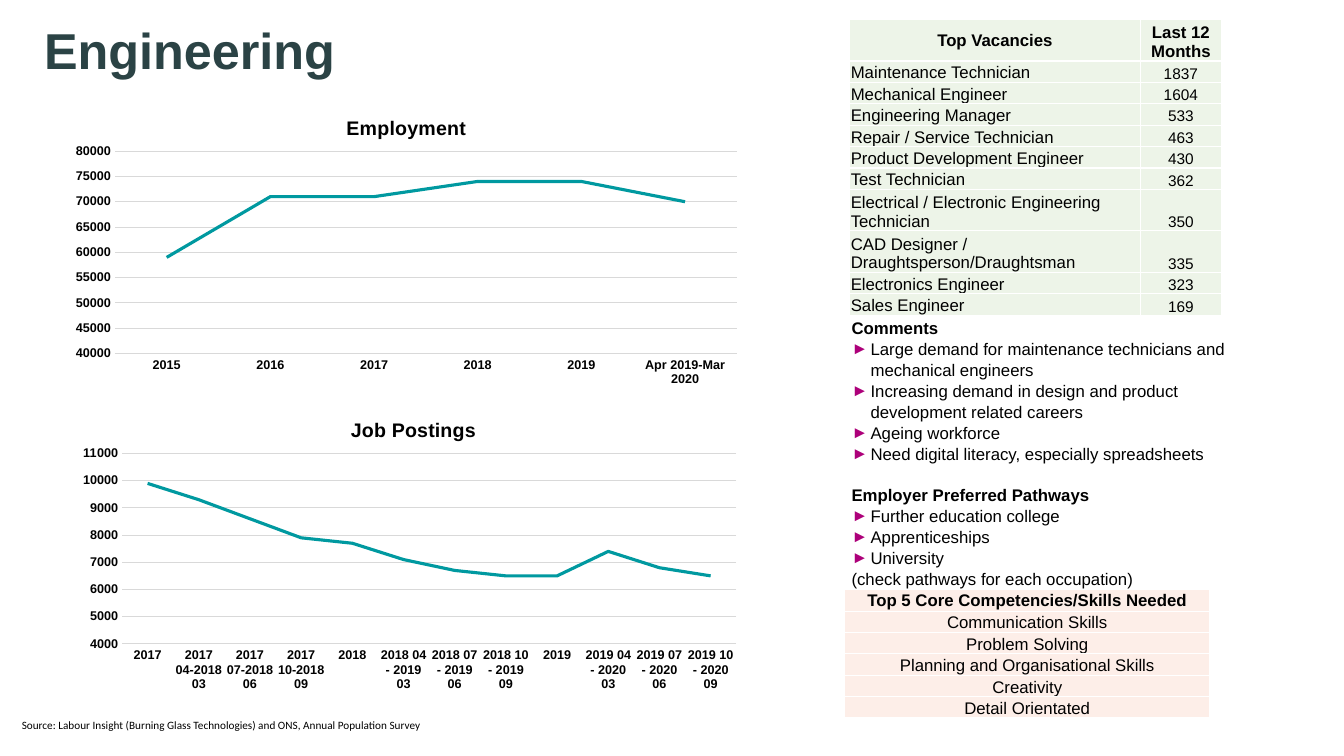
from lxml.etree import SubElement
from pptx import Presentation
from pptx.chart.data import CategoryChartData
from pptx.dml.color import RGBColor
from pptx.enum.chart import XL_CHART_TYPE as ChartType, XL_TICK_MARK as Tick
from pptx.enum.text import MSO_ANCHOR as Anchor, MSO_AUTO_SIZE as AutoSize, PP_ALIGN as Align
from pptx.oxml.ns import qn
from pptx.oxml.xmlchemy import OxmlElement
from pptx.util import Cm, Pt

SLATE = RGBColor(0x2B, 0x43, 0x45)
TEAL = RGBColor(0x00, 0x99, 0xA0)
MAGENTA = RGBColor(0xAD, 0x00, 0x7A)
GREEN_TINT = RGBColor(0xED, 0xF4, 0xE8)
PEACH_TINT = RGBColor(0xFD, 0xEE, 0xE8)
GREY = RGBColor(0xD9, 0xD9, 0xD9)
BLACK = RGBColor(0x00, 0x00, 0x00)
WHITE = RGBColor(0xFF, 0xFF, 0xFF)


class SectorSlide:
    """Holds the slide and the style shared by its elements."""
    font = "Arial"
    body_size = 12

    def __init__(self, slide):
        self.slide = slide

    def style(self, font, size, bold=False, color=BLACK, name=None):
        font.name = name or self.font
        font.size = Pt(size)
        font.bold = bold
        font.color.rgb = color

    def text(self, box, lines, size=None, bold=False, color=BLACK, name=None):
        """Adds a text box with one paragraph per line."""
        frame = self.slide.shapes.add_textbox(*map(Cm, box)).text_frame
        frame.word_wrap = True
        frame.text = "\n".join(lines)
        for paragraph in frame.paragraphs:
            for run in paragraph.runs:
                self.style(run.font, size or self.body_size, bold, color, name)
        return frame

    def bullet(self, paragraph):
        props = paragraph._p.get_or_add_pPr()
        props.set("marL", str(Cm(0.48)))
        props.set("indent", str(Cm(-0.48)))
        color = SubElement(props, qn("a:buClr"))
        SubElement(color, qn("a:srgbClr"), val=str(MAGENTA))
        SubElement(props, qn("a:buFont"), typeface=self.font)
        SubElement(props, qn("a:buChar"), char="►")

    def headed_lists(self, box, sections):
        """Adds headed lists; a line is (text, kind)."""
        lines = [line for section in sections for line in section]
        frame = self.text(box, [words for words, _ in lines])
        frame.auto_size = AutoSize.SHAPE_TO_FIT_TEXT
        for index, (paragraph, (_, kind)) in enumerate(zip(frame.paragraphs, lines)):
            if kind == "bullet":
                self.bullet(paragraph)
            elif kind == "heading":
                paragraph.runs[0].font.bold = True
                if index:
                    paragraph.space_before = Pt(14.4)
            paragraph.line_spacing = 1.04

    def cell(self, cell, words, fill, size, bold, align, anchor):
        cell.text = words
        cell.margin_left = cell.margin_right = cell.margin_top = Cm(0.03)
        cell.margin_bottom = 0
        cell.vertical_anchor = anchor
        cell.fill.solid()
        cell.fill.fore_color.rgb = fill
        paragraph = cell.text_frame.paragraphs[0]
        paragraph.alignment = align
        self.style(paragraph.runs[0].font, size, bold)
        props = cell._tc.get_or_add_tcPr()
        for position, side in enumerate(("lnL", "lnR", "lnT", "lnB")):
            border = OxmlElement(f"a:{side}")
            border.set("w", str(Pt(1)))
            paint = SubElement(border, qn("a:solidFill"))
            SubElement(paint, qn("a:srgbClr"), val=str(WHITE))
            props.insert(position, border)

    def table(self, left, top, widths, rows, fill, tall_rows=()):
        """Adds a table whose first row is the header."""
        heights = [1.04 if i in tall_rows else 0.53 for i in range(len(rows))]
        table = self.slide.shapes.add_table(
            len(rows), len(widths), Cm(left), Cm(top),
            Cm(sum(widths)), Cm(sum(heights))).table
        for column, width in zip(table.columns, widths):
            column.width = Cm(width)
        for r, (row, height) in enumerate(zip(rows, heights)):
            table.rows[r].height = Cm(height)
            for c, words in enumerate(row):
                header = r == 0
                listed = not header and len(row) > 1
                self.cell(table.cell(r, c), words, fill,
                          size=11 if listed and c == 1 else self.body_size,
                          bold=header,
                          align=Align.LEFT if listed and c == 0 else Align.CENTER,
                          anchor=Anchor.MIDDLE if header and c == 0 else Anchor.BOTTOM)

    def pin(self, parent, position, **fractions):
        """Sets a manual layout on a chart part."""
        for old in parent.findall(qn("c:layout")):
            parent.remove(old)
        layout = OxmlElement("c:layout")
        parent.insert(position, layout)
        manual = SubElement(layout, qn("c:manualLayout"))
        if "w" in fractions:
            SubElement(manual, qn("c:layoutTarget"), val="inner")
        for mode in ("xMode", "yMode"):
            SubElement(manual, qn(f"c:{mode}"), val="edge")
        for key, value in fractions.items():
            SubElement(manual, qn(f"c:{key}"), val=str(value))

    def line_chart(self, box, title, points, scale, plot_height):
        """Adds a one-line chart; scale is (minimum, maximum, step)."""
        data = CategoryChartData()
        data.categories = list(points)
        data.add_series("Series 1", list(points.values()))
        chart = self.slide.shapes.add_chart(ChartType.LINE, *map(Cm, box), data).chart
        self.style(chart.font, 10, True)
        chart.has_legend = False
        chart.has_title = True
        heading = chart.chart_title.text_frame
        heading.text = title
        self.style(heading.paragraphs[0].runs[0].font, 14, True)
        self.pin(chart.chart_title._element, 1, x=0.41, y=0.06)
        self.pin(chart._chartSpace.chart.plotArea, 0, x=0.08, y=0.19, w=0.9, h=plot_height)

        plot = chart.plots[0]
        plot.vary_by_categories = False
        series = plot.series[0]
        series.smooth = False
        series.format.line.color.rgb = TEAL
        series.format.line.width = Pt(2.25)

        values, categories = chart.value_axis, chart.category_axis
        for axis in (values, categories):
            axis.major_tick_mark = axis.minor_tick_mark = Tick.NONE
            self.style(axis.tick_labels.font, 9, True)
        values.minimum_scale, values.maximum_scale, values.major_unit = scale
        values.format.line.fill.background()
        values.has_major_gridlines = True
        for line in (values.major_gridlines.format.line, categories.format.line):
            line.color.rgb = GREY
            line.width = Pt(0.75)


def main():
    deck = Presentation()
    deck.slide_width, deck.slide_height = Cm(33.87), Cm(19.05)
    page = SectorSlide(deck.slides.add_slide(deck.slide_layouts[6]))

    # Title
    title = page.text((0.86, -0.51, 32.16, 3.68), ["Engineering"], 36, True, SLATE)
    title.vertical_anchor = Anchor.MIDDLE
    title.paragraphs[0].line_spacing = 0.9

    # Charts
    employment = {"2015": 59000, "2016": 71000, "2017": 71000, "2018": 74000,
                  "2019": 74000, "Apr 2019-Mar 2020": 70000}
    page.line_chart((1.5, 2.36, 17.42, 7.62), "Employment", employment,
                    (40000, 80000, 5000), 0.67)
    postings = {"2017": 9900, "2017 04-2018 03": 9300, "2017 07-2018 06": 8600,
                "2017 10-2018 09": 7900, "2018": 7700, "2018 04 - 2019 03": 7100,
                "2018 07 - 2019 06": 6700, "2018 10 - 2019 09": 6500, "2019": 6500,
                "2019 04 - 2020 03": 7400, "2019 07 - 2020 06": 6800,
                "2019 10 - 2020 09": 6500}
    page.line_chart((1.7, 9.98, 17.2, 7.62), "Job Postings", postings,
                    (4000, 11000, 1000), 0.63)

    # Vacancies
    vacancies = [("Top Vacancies", "Last 12 Months"),
                 ("Maintenance Technician", "1837"), ("Mechanical Engineer", "1604"),
                 ("Engineering Manager", "533"), ("Repair / Service Technician", "463"),
                 ("Product Development Engineer", "430"), ("Test Technician", "362"),
                 ("Electrical / Electronic Engineering Technician", "350"),
                 ("CAD Designer / Draughtsperson/Draughtsman", "335"),
                 ("Electronics Engineer", "323"), ("Sales Engineer", "169")]
    page.table(21.41, 0.49, (7.33, 2.04), vacancies, GREEN_TINT, tall_rows=(0, 7, 8))

    # Comments and pathways
    comments = [("Comments", "heading"),
                ("Large demand for maintenance technicians and mechanical engineers", "bullet"),
                ("Increasing demand in design and product development related careers", "bullet"),
                ("Ageing workforce", "bullet"),
                ("Need digital literacy, especially spreadsheets", "bullet")]
    pathways = [("Employer Preferred Pathways", "heading"),
                ("Further education college", "bullet"),
                ("Apprenticeships", "bullet"),
                ("University", "bullet"),
                ("(check pathways for each occupation)", "plain")]
    page.headed_lists((21.21, 7.87, 11, 7.95), (comments, pathways))

    # Skills
    skills = ["Top 5 Core Competencies/Skills Needed", "Communication Skills",
              "Problem Solving", "Planning and Organisational Skills",
              "Creativity", "Detail Orientated"]
    page.table(21.29, 14.86, (9.2,), [(skill,) for skill in skills], PEACH_TINT)

    # Source line
    page.text((0.3, 17.98, 13.84, 0.94),
              ["Source: Labour Insight (Burning Glass Technologies) and ONS, "
               "Annual Population Survey"], 8, name="Calibri")

    deck.save("out.pptx")


if __name__ == "__main__":
    main()
